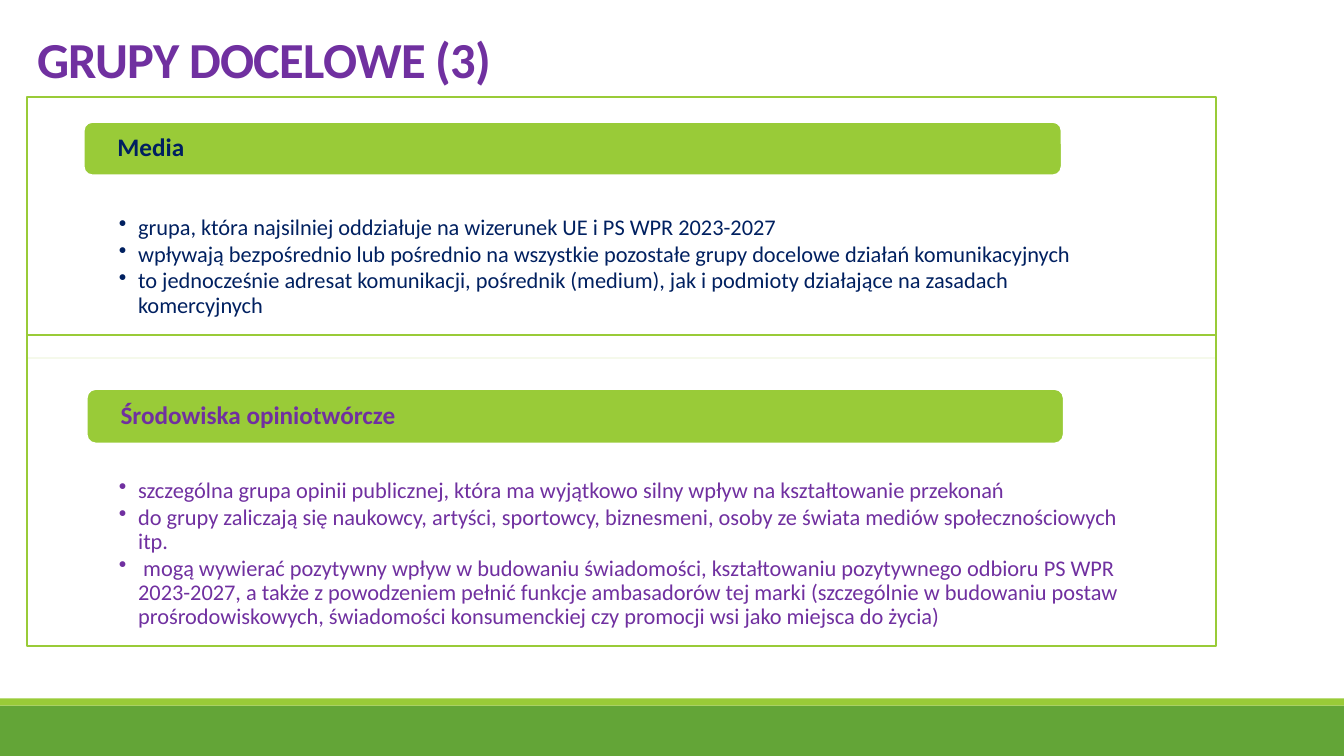
from dataclasses import dataclass

import pptx
import pptx.dml.color
import pptx.enum.shapes
import pptx.enum.text
import pptx.oxml
import pptx.oxml.ns
import pptx.util
from pptx.util import Inches

SHAPE = pptx.enum.shapes.MSO_SHAPE
ALIGN = pptx.enum.text.PP_ALIGN
ANCHOR = pptx.enum.text.MSO_ANCHOR


@dataclass(frozen=True)
class Theme:
    font: str = "Calibri"
    lime: str = "99CB38"
    green: str = "63A537"
    white: str = "FFFFFF"
    navy: str = "002060"
    purple: str = "7030A0"
    title_size: float = 36
    heading_size: float = 18
    body_size: float = 16
    line_width: float = 1.25


@dataclass(frozen=True)
class Area:
    left: float
    top: float
    width: float
    height: float


@dataclass(frozen=True)
class AudienceGroup:
    heading: str
    points: tuple[str, ...]
    color: str
    panel: Area
    banner: Area
    body_inset: float


THEME = Theme()
PANEL_LEFT, PANEL_WIDTH = 0.27, 11.79
BULLET_INDENT = 0.19

GROUPS = (
    AudienceGroup(
        "Media",
        (
            "grupa, która najsilniej oddziałuje na wizerunek UE i PS WPR 2023-2027",
            "wpływają bezpośrednio lub pośrednio na wszystkie pozostałe grupy docelowe działań komunikacyjnych",
            "to jednocześnie adresat komunikacji, pośrednik (medium), jak i podmioty działające na zasadach komercyjnych",
        ),
        THEME.navy,
        Area(PANEL_LEFT, 0.96, PANEL_WIDTH, 2.59),
        Area(0.83, 1.21, 9.7, 0.53),
        1.18,
    ),
    AudienceGroup(
        "Środowiska opiniotwórcze",
        (
            "szczególna grupa opinii publicznej, która ma wyjątkowo silny wpływ na kształtowanie przekonań",
            "do grupy zaliczają się naukowcy, artyści, sportowcy, biznesmeni, osoby ze świata mediów społecznościowych itp.",
            " mogą wywierać pozytywny wpływ w budowaniu świadomości, kształtowaniu pozytywnego odbioru PS WPR "
            "2023-2027, a także z powodzeniem pełnić funkcje ambasadorów tej marki (szczególnie w budowaniu postaw "
            "prośrodowiskowych, świadomości konsumenckiej czy promocji wsi jako miejsca do życia)",
        ),
        THEME.purple,
        Area(PANEL_LEFT, 3.32, PANEL_WIDTH, 3.09),
        Area(0.86, 3.86, 9.69, 0.54),
        1.43,
    ),
)


def rgb(color: str) -> pptx.dml.color.RGBColor:
    return pptx.dml.color.RGBColor.from_string(color)


def add_box(page, kind, area: Area, fill: str, line: str | None = None, opacity: int = 100):
    box = page.shapes.add_shape(
        kind, Inches(area.left), Inches(area.top), Inches(area.width), Inches(area.height)
    )
    box.shadow.inherit = False
    box.fill.solid()
    box.fill.fore_color.rgb = rgb(fill)
    if opacity < 100:
        color = box.fill._xPr.find(".//" + pptx.oxml.ns.qn("a:srgbClr"))
        alpha = pptx.oxml.parse_xml(f'<a:alpha {pptx.oxml.ns.nsdecls("a")} val="{opacity * 1000}"/>')
        color.append(alpha)
    if line:
        box.line.color.rgb = rgb(line)
        box.line.width = pptx.util.Pt(THEME.line_width)
    else:
        box.line.fill.background()
    return box


def write_text(
    box,
    lines: tuple[str, ...],
    *,
    size: float,
    color: str,
    bold: bool = False,
    anchor=ANCHOR.TOP,
    insets: tuple[float, float, float, float] = (0.1, 0.05, 0.1, 0.05),
    line_spacing: float = 0.9,
    space_after: float = 0,
    bullets: bool = False,
    tracking: float = 0,
) -> None:
    frame = box.text_frame
    frame.word_wrap = True
    frame.auto_size = pptx.enum.text.MSO_AUTO_SIZE.NONE
    frame.vertical_anchor = anchor
    frame.margin_left, frame.margin_top, frame.margin_right, frame.margin_bottom = map(Inches, insets)
    for index, line in enumerate(lines):
        para = frame.add_paragraph() if index else frame.paragraphs[0]
        para.alignment = ALIGN.LEFT
        para.line_spacing = line_spacing
        para.space_after = pptx.util.Pt(space_after)
        if bullets:
            properties = para._p.get_or_add_pPr()
            properties.set("marL", str(Inches(BULLET_INDENT)))
            properties.set("indent", str(-Inches(BULLET_INDENT)))
            properties.append(
                pptx.oxml.parse_xml(f'<a:buChar {pptx.oxml.ns.nsdecls("a")} char="•"/>')
            )
        span = para.add_run()
        span.text = line
        span.font.name = THEME.font
        span.font.size = pptx.util.Pt(size)
        span.font.bold = bold
        span.font.color.rgb = rgb(color)
        if tracking:
            span._r.get_or_add_rPr().set("spc", str(round(tracking * 100)))


def add_group(page, group: AudienceGroup) -> None:
    panel = add_box(page, SHAPE.RECTANGLE, group.panel, THEME.white, THEME.lime, opacity=90)
    write_text(
        panel, group.points, size=THEME.body_size, color=group.color,
        insets=(0.91, group.body_inset, 0.91, 0.11), space_after=2, bullets=True,
    )
    banner = add_box(page, SHAPE.ROUNDED_RECTANGLE, group.banner, THEME.lime, THEME.white)
    write_text(
        banner, (group.heading,), size=THEME.heading_size, color=group.color, bold=True,
        anchor=ANCHOR.MIDDLE, insets=(0.31, 0, 0.31, 0),
    )


def add_title(page, text: str) -> None:
    title = page.shapes.title
    title.left, title.top = Inches(PANEL_LEFT), Inches(0.12)
    title.width, title.height = Inches(13.06), Inches(0.81)
    write_text(
        title, (text,), size=THEME.title_size, color=THEME.purple, bold=True,
        anchor=ANCHOR.BOTTOM, line_spacing=0.85, tracking=-0.5,
    )


def main() -> None:
    deck = pptx.Presentation()
    deck.slide_width, deck.slide_height = Inches(13.33), Inches(7.5)
    page = deck.slides.add_slide(deck.slide_layouts[5])
    add_box(page, SHAPE.RECTANGLE, Area(0, 7, 13.33, 0.5), THEME.green)
    add_box(page, SHAPE.RECTANGLE, Area(0, 6.93, 13.33, 0.07), THEME.lime)
    add_title(page, "GRUPY DOCELOWE (3)")
    for group in GROUPS:
        add_group(page, group)
    deck.save("out.pptx")


if __name__ == "__main__":
    main()
